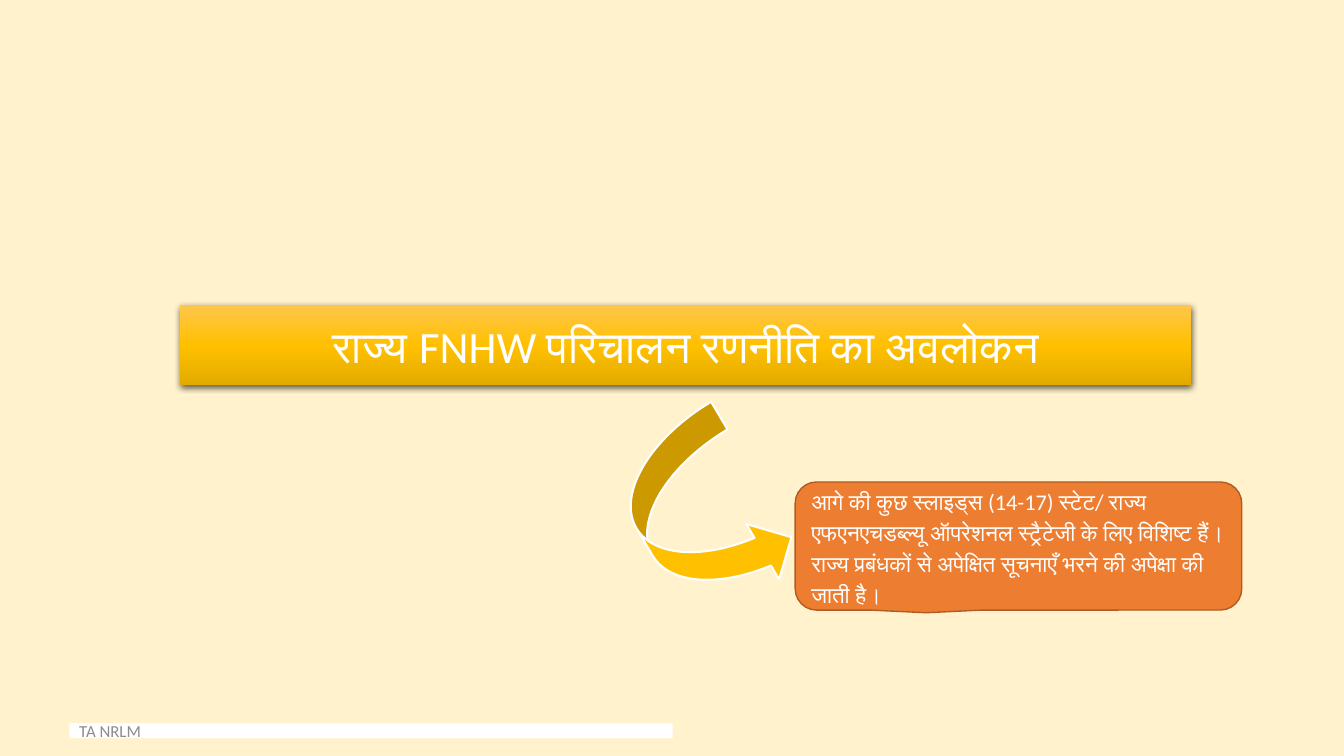
from dataclasses import dataclass

from lxml.etree import SubElement
from pptx import Presentation
from pptx.dml.color import RGBColor as Color
from pptx.enum.shapes import MSO_SHAPE as Shape
from pptx.enum.text import MSO_ANCHOR as Anchor, PP_ALIGN as Align
from pptx.oxml.ns import qn
from pptx.util import Pt


@dataclass(frozen=True)
class Theme:
    font: str = "Calibri"
    background: str = "FFF2CC"
    white: str = "FFFFFF"
    gold: str = "FFC000"
    gold_light: str = "FFC64B"
    gold_dark: str = "E3AB00"
    orange: str = "ED7D31"
    orange_dark: str = "AF5C24"
    grey: str = "8C8C8C"
    shadow: str = "000000"
    title_size: int = 32
    note_size: int = 16
    footer_size: int = 12


theme = Theme()


def add_panel(page, kind, box, fill, line=None, line_width=1):
    panel = page.shapes.add_shape(kind, *(Pt(length) for length in box))
    panel.shadow.inherit = False
    panel.fill.solid()
    panel.fill.fore_color.rgb = Color.from_string(fill)
    if line:
        panel.line.color.rgb = Color.from_string(line)
        panel.line.width = Pt(line_width)
    else:
        panel.line.fill.background()
    return panel


def write_text(panel, text, size, color, align=Align.LEFT, spacing=1.0):
    frame = panel.text_frame
    frame.word_wrap = True
    frame.vertical_anchor = Anchor.MIDDLE
    para = frame.paragraphs[0]
    para.text = text
    para.alignment = align
    para.line_spacing = spacing
    for span in para.runs:
        span.font.name = theme.font
        span.font.size = Pt(size)
        span.font.color.rgb = Color.from_string(color)


def add_element(parent, tag, **attributes):
    return SubElement(parent, qn(tag), {name: str(value) for name, value in attributes.items()})


def shade_gold(panel):
    panel.fill.gradient()
    panel.fill.gradient_angle = 270
    stops = panel.fill._fill._gradFill.find(qn("a:gsLst"))
    for stop in list(stops):
        stops.remove(stop)
    for percent, color in ((0, theme.gold_light), (50, theme.gold), (100, theme.gold_dark)):
        stop = add_element(stops, "a:gs", pos=percent * 1000)
        add_element(stop, "a:srgbClr", val=color)


def cast_shadow(panel):
    effects = panel._element.spPr.find(qn("a:effectLst"))
    shadow = add_element(effects, "a:outerShdw", blurRad=Pt(4.5), dist=Pt(1.5),
                         dir=5400000, algn="ctr", rotWithShape=0)
    color = add_element(shadow, "a:srgbClr", val=theme.shadow)
    add_element(color, "a:alpha", val=63000)


def add_footer(page, box):
    footer = add_panel(page, Shape.RECTANGLE, box, theme.white)
    write_text(footer, "TA NRLM", theme.footer_size, theme.grey)


def add_note(page, box):
    note = add_panel(page, Shape.ROUNDED_RECTANGULAR_CALLOUT, box, theme.orange, theme.orange_dark)
    for index, value in enumerate((-0.206, 0.521, 0.167)):
        note.adjustments[index] = value
    text = ("आगे की कुछ स्लाइड्स (14-17) स्टेट/ राज्य एफएनएचडब्ल्यू ऑपरेशनल स्ट्रैटेजी "
            "के लिए विशिष्ट हैं। राज्य प्रबंधकों से अपेक्षित सूचनाएँ भरने की अपेक्षा की जाती है।")
    write_text(note, text, theme.note_size, theme.white, spacing=1.15)


def add_arrow(page, box):
    arrow = add_panel(page, Shape.CURVED_RIGHT_ARROW, box, theme.gold, theme.white, 1.5)
    arrow.rotation = 329.3


def add_title(page, box):
    title = add_panel(page, Shape.RECTANGLE, box, theme.gold)
    shade_gold(title)
    cast_shadow(title)
    write_text(title, "राज्य FNHW परिचालन रणनीति का अवलोकन",
               theme.title_size, theme.white, Align.CENTER)


def main():
    deck = Presentation()
    deck.slide_width, deck.slide_height = Pt(960), Pt(540)
    page = deck.slides.add_slide(deck.slide_layouts[6])
    page.background.fill.solid()
    page.background.fill.fore_color.rgb = Color.from_string(theme.background)
    add_footer(page, (49.5, 516.5, 431, 10.8))
    add_note(page, (568, 344.3, 319, 91.5))
    add_arrow(page, (457, 301, 92, 135.5))
    add_title(page, (128.5, 218.2, 722.5, 57))
    deck.save("out.pptx")


if __name__ == "__main__":
    main()
